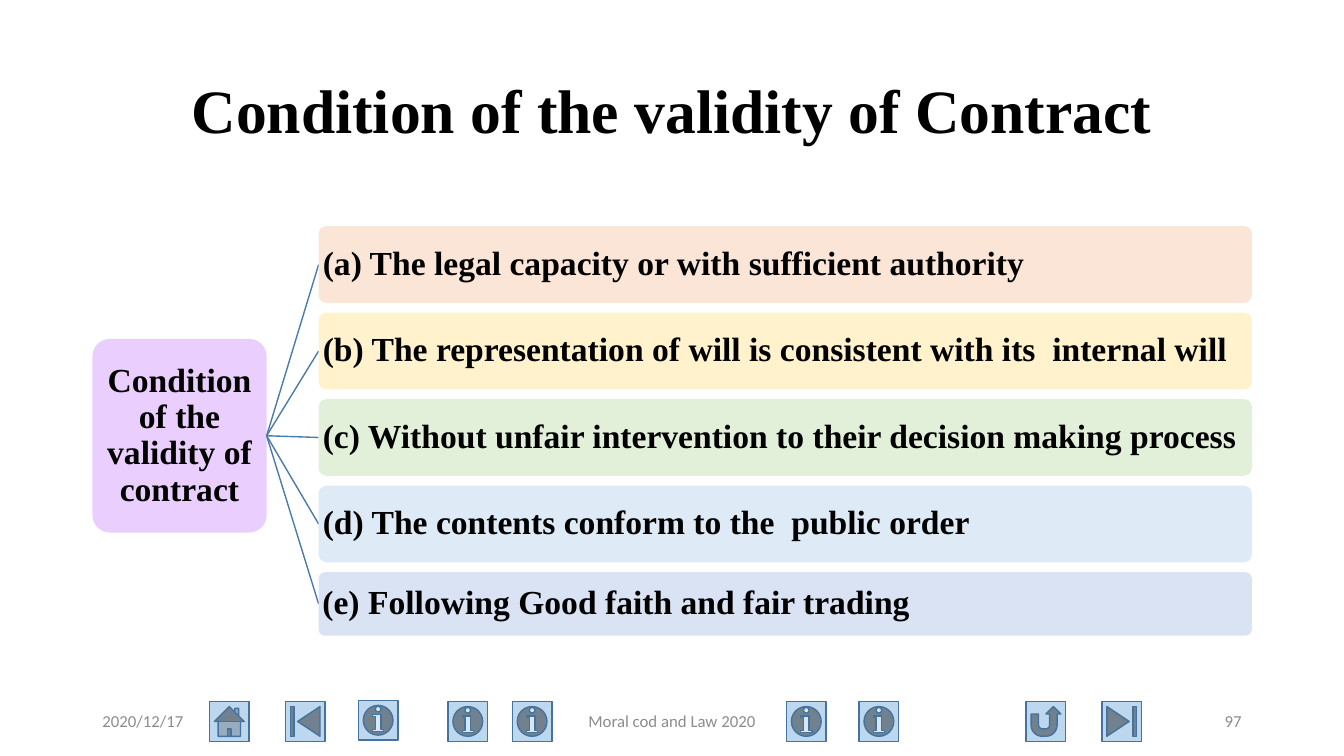
"""Build the slide on the conditions of validity of a contract."""
from lxml.etree import SubElement
from pptx import Presentation
from pptx.dml.color import RGBColor
from pptx.enum.shapes import MSO_CONNECTOR, MSO_SHAPE
from pptx.enum.text import MSO_ANCHOR, MSO_AUTO_SIZE, PP_ALIGN
from pptx.oxml.ns import qn
from pptx.util import Cm, Pt

THEME = {
    "title": {"name": "Times New Roman", "size": Pt(44), "bold": True},
    "diagram": {"name": "Times New Roman", "size": Pt(24), "bold": True},
    "footer": {"name": "Calibri", "size": Pt(12), "bold": False},
    "ink": {"title": "000000", "diagram": "000000", "footer": "8C8C8C"},
    "spacing": {"title": 0.9, "diagram": 0.9, "footer": 1.0},
    "root": "E9CEFE",
    "branch": "497CAB",
    "button": "BDD7EE",
    "button_edge": "43739E",
}


def write(holder, text, role, align, inset=0.25):
    frame = holder.text_frame
    frame.text = text
    layout = {
        "word_wrap": True,
        "auto_size": MSO_AUTO_SIZE.NONE,
        "vertical_anchor": MSO_ANCHOR.MIDDLE,
        "margin_left": Cm(inset),
        "margin_right": Cm(inset),
        "margin_top": Cm(0.05),
        "margin_bottom": Cm(0.05),
    }
    for attribute, value in layout.items():
        setattr(frame, attribute, value)
    paragraph = frame.paragraphs[0]
    paragraph.alignment = align
    paragraph.line_spacing = THEME["spacing"][role]
    font = paragraph.runs[0].font
    for attribute, value in THEME[role].items():
        setattr(font, attribute, value)
    font.color.rgb = RGBColor.from_string(THEME["ink"][role])


def draw(kind, left, top, width, height, fill, edge=None):
    shape = slide.shapes.add_shape(kind, Cm(left), Cm(top), Cm(width), Cm(height))
    shape.shadow.inherit = False
    shape.fill.solid()
    shape.fill.fore_color.rgb = RGBColor.from_string(fill)
    if edge:
        shape.line.color.rgb = RGBColor.from_string(edge)
        shape.line.width = Pt(1)
    else:
        shape.line.fill.background()
    return shape


presentation = Presentation()
presentation.slide_width, presentation.slide_height = Cm(33.87), Cm(19.05)
slide = presentation.slides.add_slide(presentation.slide_layouts[5])

navigation = [
    (MSO_SHAPE.ACTION_BUTTON_HOME, 5.28, 17.68),
    (MSO_SHAPE.ACTION_BUTTON_BEGINNING, 7.19, 17.68),
    (MSO_SHAPE.ACTION_BUTTON_INFORMATION, 9.03, 17.65),
    (MSO_SHAPE.ACTION_BUTTON_INFORMATION, 11.29, 17.68),
    (MSO_SHAPE.ACTION_BUTTON_INFORMATION, 12.91, 17.68),
    (MSO_SHAPE.ACTION_BUTTON_INFORMATION, 19.82, 17.68),
    (MSO_SHAPE.ACTION_BUTTON_INFORMATION, 21.65, 17.68),
    (MSO_SHAPE.ACTION_BUTTON_RETURN, 25.86, 17.68),
    (MSO_SHAPE.ACTION_BUTTON_END, 27.77, 17.68),
]
for action, left, top in navigation:
    draw(action, left, top, 1, 1, THEME["button"], THEME["button_edge"])

heading = slide.shapes.title
place = {"left": Cm(2.33), "top": Cm(1.01), "width": Cm(29.21), "height": Cm(3.68)}
for attribute, value in place.items():
    setattr(heading, attribute, value)
write(heading, "Condition of the validity of Contract", "title", PP_ALIGN.CENTER)

footer = [
    ("2020/12/17", 2.33, 7.62, PP_ALIGN.LEFT),
    ("Moral cod and Law 2020", 11.22, 11.43, PP_ALIGN.CENTER),
    ("97", 23.92, 7.62, PP_ALIGN.RIGHT),
]
for text, left, width, align in footer:
    note = slide.shapes.add_textbox(Cm(left), Cm(17.66), Cm(width), Cm(1.01))
    write(note, text, "footer", align)

root_left, root_width, root_middle, root_height = 2.33, 4.39, 10.98, 4.88
root = draw(MSO_SHAPE.ROUNDED_RECTANGLE, root_left, root_middle - root_height / 2,
            root_width, root_height, THEME["root"])
root.adjustments[0] = 0.1
write(root, "Condition of the validity of contract", "diagram", PP_ALIGN.CENTER, 0.05)

conditions = [
    ("(a) The legal capacity or with sufficient authority", "FBE5D6", 1.93),
    ("(b) The representation of will is consistent with its  internal will", "FFF2CC", 1.93),
    ("(c) Without unfair intervention to their decision making process", "E2F0D9", 1.93),
    ("(d) The contents conform to the  public order", "DEEBF7", 1.93),
    ("(e) Following Good faith and fair trading", "DAE3F3", 1.6),
]
bar_left, bar_width, first_top, gap = 8.03, 23.52, 5.7, 0.25
top = first_top
for text, fill, height in conditions:
    branch = slide.shapes.add_connector(
        MSO_CONNECTOR.STRAIGHT, Cm(root_left + root_width), Cm(root_middle),
        Cm(bar_left), Cm(top + height / 2))
    branch.line.color.rgb = RGBColor.from_string(THEME["branch"])
    branch.line.width = Pt(1)
    SubElement(branch._element.spPr, qn("a:effectLst"))
    bar = draw(MSO_SHAPE.ROUNDED_RECTANGLE, bar_left, top, bar_width, height, fill)
    bar.adjustments[0] = 0.1
    write(bar, text, "diagram", PP_ALIGN.LEFT, 0.05)
    top += height + gap

presentation.save("out.pptx")
